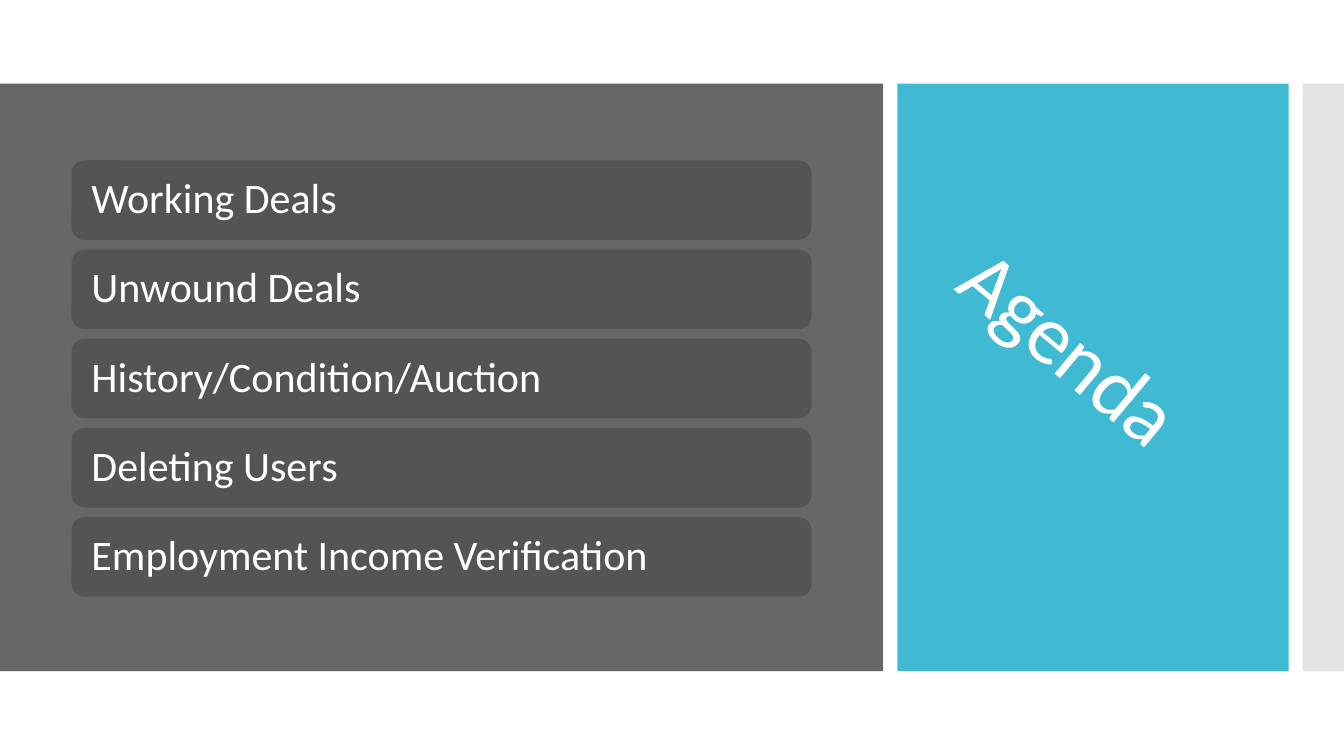
import pptx
import pptx.util
import pptx.dml.color
import pptx.enum.shapes
import pptx.enum.text

Inches = pptx.util.Inches
MSO = pptx.enum.shapes.MSO_SHAPE

TITLE = "Agenda"
TOPICS = [
    "Working Deals",
    "Unwound Deals",
    "History/Condition/Auction",
    "Deleting Users",
    "Employment Income Verification",
]
PANELS = [
    (0, 8.76, "676767"),
    (8.9, 3.88, "40BAD2"),
    (12.92, 0.41, "E3E3E3"),
]
PANEL_TOP, PANEL_HEIGHT = 0.83, 5.83
BAR_LEFT, BAR_WIDTH, BAR_HEIGHT = 0.71, 7.34, 0.79
FIRST_TOP, LAST_TOP = 1.59, 5.13


def color(value):
    return pptx.dml.color.RGBColor.from_string(value)


def add_block(s, kind, left, top, width, height, fill):
    sp = s.shapes.add_shape(kind, *map(Inches, (left, top, width, height)))
    sp.shadow.inherit = False
    sp.fill.solid()
    sp.fill.fore_color.rgb = color(fill)
    sp.line.fill.background()
    return sp


def write(sp, text, size, inset=0.1, after=0, spacing=None):
    tf = sp.text_frame
    tf.word_wrap = True
    tf.auto_size = pptx.enum.text.MSO_AUTO_SIZE.NONE
    tf.vertical_anchor = pptx.enum.text.MSO_ANCHOR.MIDDLE
    tf.margin_left = tf.margin_right = Inches(inset)
    p = tf.paragraphs[0]
    p.alignment = pptx.enum.text.PP_ALIGN.LEFT
    p.line_spacing = 0.9
    p.space_after = pptx.util.Pt(after)
    r = p.add_run()
    r.text = text
    r.font.name = "Calibri"
    r.font.size = pptx.util.Pt(size)
    r.font.color.rgb = color("FFFFFF")
    if spacing is not None:
        r.font._element.set("spc", str(round(spacing * 100)))


def main():
    prs = pptx.Presentation()
    prs.slide_width, prs.slide_height = Inches(13.33), Inches(7.5)
    s = prs.slides.add_slide(prs.slide_layouts[5])

    for left, width, fill in PANELS:
        add_block(s, MSO.RECTANGLE, left, PANEL_TOP, width, PANEL_HEIGHT, fill)

    title = s.shapes.title
    title.left, title.top = Inches(9.18), Inches(3.17)
    title.width, title.height = Inches(3.22), Inches(0.92)
    title.rotation = 39.8
    write(title, TITLE, 60, spacing=-0.6)
    s.shapes._spTree.append(title._element)

    pitch = (LAST_TOP - FIRST_TOP) / (len(TOPICS) - 1)
    for i, topic in enumerate(TOPICS):
        bar = add_block(s, MSO.ROUNDED_RECTANGLE, BAR_LEFT, FIRST_TOP + i * pitch,
                        BAR_WIDTH, BAR_HEIGHT, "545454")
        write(bar, topic, 30, inset=0.16)

    prs.save("out.pptx")


if __name__ == "__main__":
    main()
